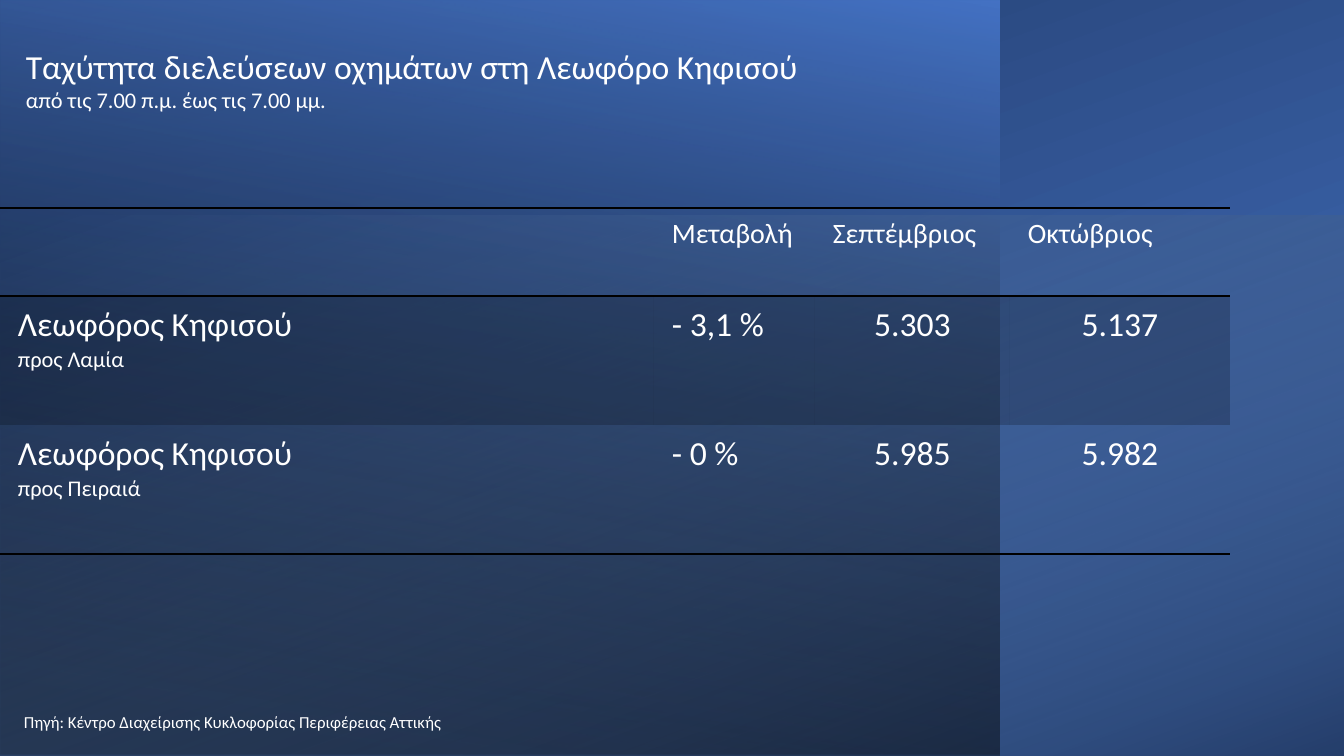
from lxml import etree
from pptx import Presentation
from pptx import util as u
from pptx.dml.color import RGBColor
from pptx.enum import shapes, text
from pptx.oxml.ns import qn

# Content: a paragraph is (wording, points)
TITLE = [("Ταχύτητα διελεύσεων οχημάτων στη Λεωφόρο Κηφισού", 24),
         ("από τις 7.00 π.μ. έως τις 7.00 μμ.", 16)]
SOURCE = [("Πηγή: Κέντρο Διαχείρισης Κυκλοφορίας Περιφέρειας Αττικής", 12)]
HEADER = ["", "Μεταβολή", "Σεπτέμβριος", "Οκτώβριος"]
ROADS = [
    ("Λεωφόρος Κηφισού", "προς Λαμία", "- 3,1 %", "5.303", "5.137"),
    ("Λεωφόρος Κηφισού", "προς Πειραιά", "- 0 %", "5.985", "5.982"),
]

# Style and layout in px
FONT = "Calibri"
COLORS = {"white": "FFFFFF", "black": "000000", "blue": "4472C4",
          "navy": "203864", "sky": "9DC3E6"}
W, H = 1344, 756
COLS, ROWS = [654, 161, 195, 220], [88, 129, 129]
TABLE_TOP = 208
NO_STYLE = "{2D5ABB26-0587-4C30-8999-92F81FD0307C}"
# Panels: box as seen, rotation, gradient angle, stops (place, colour, opacity %)
PANELS = [
    ((0, 0, W, H), 270, 200, [(8, "blue", 100), (100, "navy", 100)]),
    ((0, 0, 1000, H), 180, 80, [(8, "black", 52), (100, "blue", 100)]),
    ((0, 216, W, 540), 270, 20, [(0, "sky", 0), (100, "black", 46)]),
]


def px(n):
    return u.Emu(round(n * 12192000 / W))


def rgb(name):
    return RGBColor.from_string(COLORS[name])


def set_alpha(color_element, percent):
    etree.SubElement(color_element, qn("a:alpha")).set("val", str(percent * 1000))


def add_panel(slide, box, rotation, angle, stops):
    x, y, w, h = box
    if rotation == 270:  # a quarter turn swaps the sides about the centre
        x, y, w, h = x + (w - h) / 2, y + (h - w) / 2, h, w
    s = slide.shapes.add_shape(shapes.MSO_SHAPE.RECTANGLE, px(x), px(y), px(w), px(h))
    s.shadow.inherit = False
    s.line.fill.background()
    s.rotation = rotation
    s._element.spPr.xfrm.set("flipH", "1")
    s.fill.gradient()
    s.fill.gradient_angle = 360 - angle
    for stop, (place, color, _) in zip(s.fill.gradient_stops, stops):
        stop.position = place / 100
        stop.color.rgb = rgb(color)
    for element, (_, _, opacity) in zip(s._element.spPr.iter(qn("a:srgbClr")), stops):
        set_alpha(element, opacity)


def write(tf, paragraphs, align=text.PP_ALIGN.LEFT):
    tf.word_wrap = True
    for i, (wording, size) in enumerate(paragraphs):
        p = tf.paragraphs[0] if i == 0 else tf.add_paragraph()
        p.alignment = align
        r = p.add_run()
        r.text = wording
        r.font.name, r.font.size = FONT, u.Pt(size)
        r.font.color.rgb = rgb("white")


def add_text(slide, box, paragraphs):
    tf = slide.shapes.add_textbox(*map(px, box)).text_frame
    write(tf, paragraphs)
    tf.auto_size = text.MSO_AUTO_SIZE.SHAPE_TO_FIT_TEXT


def add_border(cell, side):
    ln = etree.Element(qn("a:" + side), w=str(u.Pt(1)))
    fill = etree.SubElement(ln, qn("a:solidFill"))
    etree.SubElement(fill, qn("a:srgbClr"), val=COLORS["black"])
    cell._tc.get_or_add_tcPr().insert(0, ln)


def add_speed_table(slide):
    frame = slide.shapes.add_table(len(ROWS), len(COLS), 0, px(TABLE_TOP),
                                   px(sum(COLS)), px(sum(ROWS)))
    table = frame.table
    table.first_row = table.horz_banding = False
    next(frame._element.iter(qn("a:tableStyleId"))).text = NO_STYLE
    for column, width in zip(table.columns, COLS):
        column.width = px(width)
    for row, height in zip(table.rows, ROWS):
        row.height = px(height)

    grid = [[[(label, 20)] if label else [] for label in HEADER]]
    for road, direction, *values in ROADS:
        grid.append([[(road, 24), (direction, 16)]] + [[(v, 24)] for v in values])

    for i, row in enumerate(grid):
        for j, paragraphs in enumerate(row):
            cell = table.cell(i, j)
            cell.margin_left = cell.margin_right = px(18)
            cell.margin_top = cell.margin_bottom = px(9)
            centred = i > 0 and j > 1
            write(cell.text_frame, paragraphs,
                  text.PP_ALIGN.CENTER if centred else text.PP_ALIGN.LEFT)
            if i == 1:
                cell.fill.solid()
                cell.fill.fore_color.rgb = rgb("black")
                set_alpha(next(cell._tc.tcPr.iter(qn("a:srgbClr"))), 20)
            else:
                cell.fill.background()
                add_border(cell, "lnB")
            if i == 0:
                add_border(cell, "lnT")


def main():
    prs = Presentation()
    prs.slide_width, prs.slide_height = px(W), px(H)
    slide = prs.slides.add_slide(prs.slide_layouts[6])

    # Background panels
    for panel in PANELS:
        add_panel(slide, *panel)

    # Table, title and source
    add_speed_table(slide)
    add_text(slide, (16, 41, 966, 78), TITLE)
    add_text(slide, (14, 707, 824, 30), SOURCE)

    prs.save("out.pptx")


if __name__ == "__main__":
    main()
